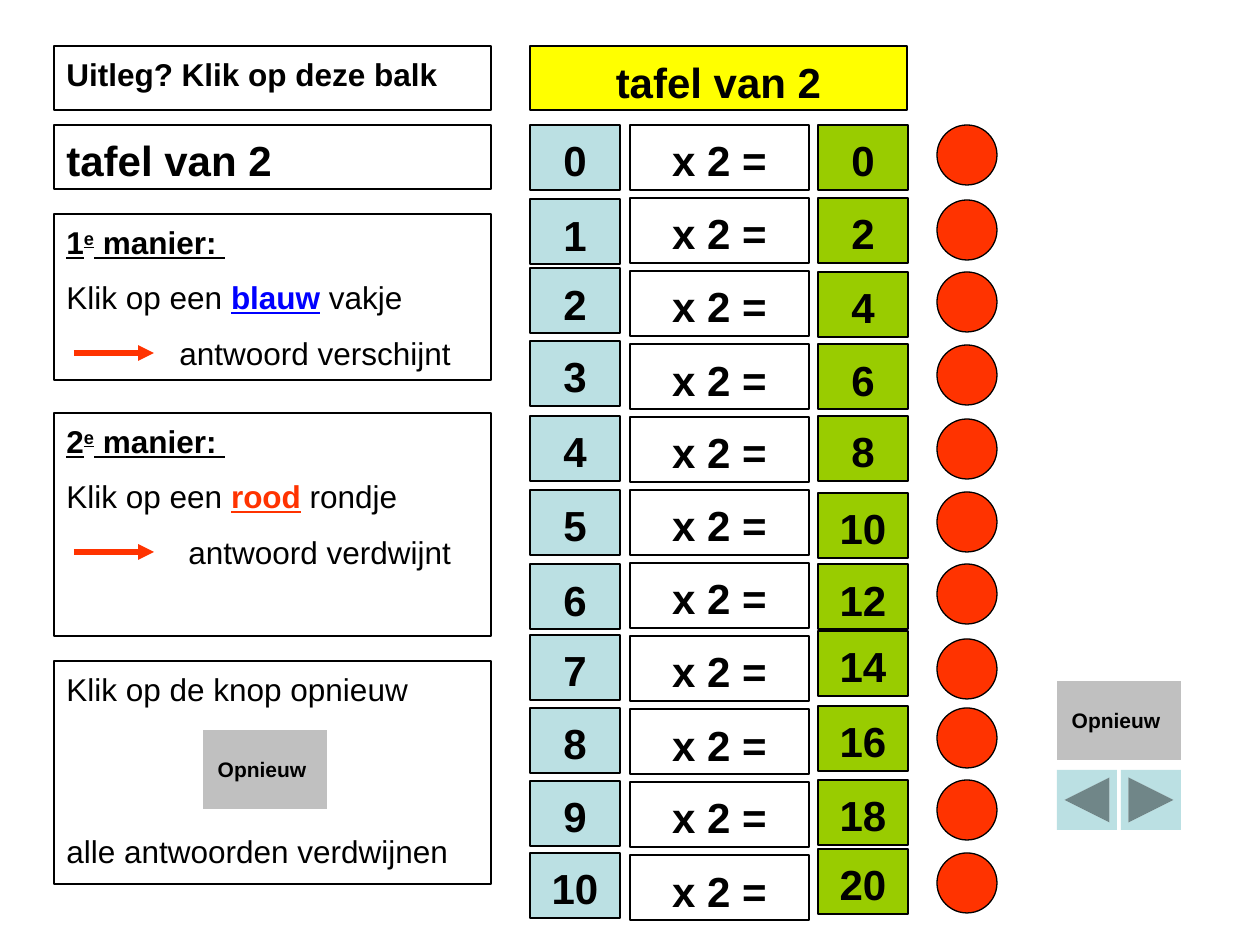
from lxml import etree
from pptx import Presentation
from pptx.dml.color import RGBColor
from pptx.enum.shapes import MSO_CONNECTOR, MSO_SHAPE
from pptx.enum.text import MSO_ANCHOR, MSO_AUTO_SIZE, PP_ALIGN
from pptx.oxml.ns import qn
from pptx.util import Emu, Pt

RECT = MSO_SHAPE.RECTANGLE
OVAL = MSO_SHAPE.OVAL
BLANK = MSO_SHAPE.ACTION_BUTTON_CUSTOM
NEXT = MSO_SHAPE.ACTION_BUTTON_FORWARD_OR_NEXT
BACK = MSO_SHAPE.ACTION_BUTTON_BACK_OR_PREVIOUS
STRAIGHT = MSO_CONNECTOR.STRAIGHT
LEFT, CENTER = PP_ALIGN.LEFT, PP_ALIGN.CENTER
TOP, MIDDLE = MSO_ANCHOR.TOP, MSO_ANCHOR.MIDDLE
FIXED = MSO_AUTO_SIZE.NONE

BLACK, WHITE, YELLOW = "000000", "FFFFFF", "FFFF00"
AQUA, GREEN, RED, BLUE, GRAY = "BBE0E3", "99CC00", "FF3300", "0000FF", "C0C0C0"


def px(n):
    return Emu(round(n * 914400 / 126))


def color(code):
    return RGBColor.from_string(code)


class Board:
    font = "Arial"
    big, mid, small = 24, 18, 12

    def __init__(self, slide):
        self.slide = slide

    def paint(self, shape, fill, line):
        if fill:
            shape.fill.solid()
            shape.fill.fore_color.rgb = color(fill)
        else:
            shape.fill.background()
        if line:
            shape.line.color.rgb = color(line)
            shape.line.width = Pt(0.75)
        else:
            shape.line.fill.background()

    def shape(self, kind, x, y, w, h, fill=None, line=BLACK):
        shape = self.slide.shapes.add_shape(kind, px(x), px(y), px(w), px(h))
        shape.shadow.inherit = False
        self.paint(shape, fill, line)
        return shape

    def style(self, run, size, bold=False, under=False, code=BLACK):
        font = run.font
        font.name, font.size = self.font, Pt(size)
        font.bold, font.underline = bold, under
        font.color.rgb = color(code)

    def label(self, shape, text, size, align, bold=True, anchor=TOP, wrap=True):
        frame = shape.text_frame
        frame.text = text
        frame.auto_size = FIXED
        frame.word_wrap = wrap
        frame.vertical_anchor = anchor
        if anchor == TOP:
            frame.margin_top = px(10 if size == self.big else 9)
        for part in frame.paragraphs:
            part.alignment = align
            part.space_before = Pt(0)
            for run in part.runs:
                self.style(run, size, bold)
        return frame

    def title(self, text, x, y, w, h):
        shape = self.slide.shapes.title
        shape.left, shape.top, shape.width, shape.height = map(px, (x, y, w, h))
        self.paint(shape, YELLOW, BLACK)
        self.label(shape, text, self.big, CENTER)

    def cell(self, text, x, y, w, fill):
        self.label(self.shape(RECT, x, y, w, 65, fill), text, self.big, CENTER)

    def panel(self, text, y, h, size, bold=False):
        return self.label(self.shape(RECT, 54, y, 437, h), text, size, LEFT, bold)

    def method(self, num, y, h, word, code, item, result, indent):
        frame = self.panel(num, y, h, self.mid)
        head = frame.paragraphs[0]
        head.add_run().text = "e"
        head.add_run().text = " manier: "
        for run in head.runs:
            self.style(run, self.mid, True, True)
        head.runs[1]._r.get_or_add_rPr().set("baseline", "30000")

        step = frame.add_paragraph()
        for text, mark in (("Klik op een ", False), (word, True), (item, False)):
            run = step.add_run()
            run.text = text
            self.style(run, self.mid, mark, mark, code if mark else BLACK)

        last = frame.add_paragraph()
        last.text = result
        self.style(last.runs[0], self.mid)
        last._p.get_or_add_pPr().set("marL", str(px(indent)))
        for part in (step, last):
            part.alignment = LEFT
            part.space_before = Pt(10)
        self.arrow(74, 154, y + 139)

    def arrow(self, x1, x2, y):
        line = self.slide.shapes.add_connector(STRAIGHT, px(x1), px(y), px(x2), px(y))
        line.line.color.rgb = color(RED)
        line.line.width = Pt(3)
        tip = etree.SubElement(line.line._get_or_add_ln(), qn("a:tailEnd"))
        tip.set("type", "triangle")
        etree.SubElement(line._element.spPr, qn("a:effectLst"))

    def button(self, x, y):
        shape = self.shape(BLANK, x, y, 124, 79, GRAY, None)
        self.label(shape, "Opnieuw ", self.small, CENTER, anchor=MIDDLE, wrap=False)


def main():
    deck = Presentation()
    deck.slide_width, deck.slide_height = px(1260), px(945)
    board = Board(deck.slides.add_slide(deck.slide_layouts[5]))

    # Table of two: factor, sum, answer and red dot on each row
    board.title("tafel van 2", 530, 46, 377, 64)
    factors = (125, 199, 268, 341, 416, 490, 564, 635, 708, 781, 853)
    answers = (125, 198, 272, 344, 416, 493, 564, 631, 706, 780, 849)
    dots = (125, 200, 272, 345, 419, 492, 564, 639, 708, 780, 853)
    for i, (left, right, dot) in enumerate(zip(factors, answers, dots)):
        board.cell(str(i), 530, left, 90, AQUA)
        board.cell("x 2 =", 630, 125 + 73 * i, 179, WHITE)
        board.cell(str(2 * i), 818, right, 90, GREEN)
        board.shape(OVAL, 937, dot, 60, 60, RED)

    # Explanation panels
    board.panel("Uitleg? Klik op deze balk", 46, 64, board.mid, True)
    board.panel("tafel van 2", 125, 64, board.big, True)
    board.method("1", 214, 166, "blauw", BLUE, " vakje", "antwoord verschijnt", 113)
    board.method("2", 413, 223, "rood", RED, " rondje", "antwoord verdwijnt", 122)
    reset = board.panel("Klik op de knop opnieuw\nalle antwoorden verdwijnen",
                        661, 223, board.mid)
    reset.paragraphs[1].space_before = Pt(71)
    board.button(203, 730)

    # Navigation
    board.button(1057, 681)
    for kind, x in ((BACK, 1057), (NEXT, 1121)):
        board.shape(kind, x, 770, 60, 60, AQUA, None)

    deck.save("out.pptx")


if __name__ == "__main__":
    main()
